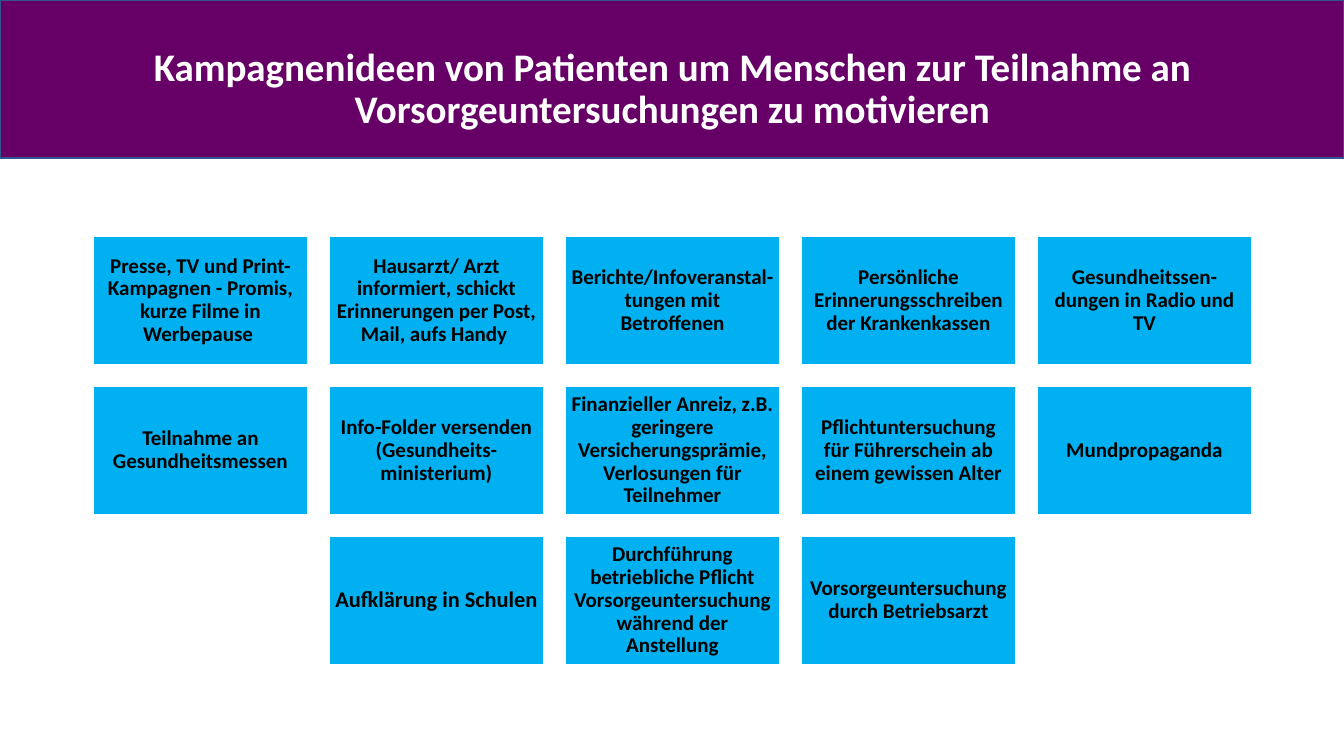
from pptx import Presentation
from pptx import util as u
from pptx.dml.color import RGBColor
from pptx.enum import shapes, text

PX = 914400 / 100.8
IDEAS = [
    ["Presse, TV und Print-Kampagnen - Promis, kurze Filme in Werbepause ",
     "Hausarzt/ Arzt informiert, schickt Erinnerungen per Post, Mail, aufs Handy ",
     "Berichte/Infoveranstal-tungen mit Betroffenen",
     "Persönliche Erinnerungsschreiben der Krankenkassen",
     "Gesundheitssen-dungen in Radio und TV"],
    ["Teilnahme an Gesundheitsmessen",
     "Info-Folder versenden (Gesundheits-ministerium)",
     "Finanzieller Anreiz, z.B. geringere Versicherungsprämie, Verlosungen für Teilnehmer",
     "Pflichtuntersuchung für Führerschein ab einem gewissen Alter",
     "Mundpropaganda"],
    ["Aufklärung in Schulen",
     "Durchführung betriebliche Pflicht Vorsorgeuntersuchung während der Anstellung",
     "Vorsorgeuntersuchung durch Betriebsarzt"],
]
LARGER = {"Aufklärung in Schulen": 16}
COLUMNS = 5


def px(length):
    return u.Emu(round(length * PX))


def color(value):
    return RGBColor.from_string(value)


class CampaignSlide:
    font = "Calibri"
    purple = "660066"
    blue = "00B0F0"
    white = "FFFFFF"
    black = "000000"
    band_edge = "325491"

    def __init__(self, deck):
        self.slide = deck.slides.add_slide(deck.slide_layouts[6])

    def box(self, left, top, width, height, fill, edge):
        area = self.slide.shapes.add_shape(
            shapes.MSO_SHAPE.RECTANGLE, px(left), px(top), px(width), px(height))
        area.shadow.inherit = False
        area.fill.solid()
        area.fill.fore_color.rgb = color(fill)
        area.line.color.rgb = color(edge)
        area.line.width = u.Pt(1)
        return area

    def label(self, frame, wording, size, ink, anchor, insets):
        frame.word_wrap = True
        frame.vertical_anchor = anchor
        side, above = insets
        frame.margin_left = frame.margin_right = px(side)
        frame.margin_top = px(above)
        frame.margin_bottom = px(min(side, above))
        paragraph = frame.paragraphs[0]
        paragraph.alignment = text.PP_ALIGN.CENTER
        paragraph.line_spacing = 0.9
        run = paragraph.add_run()
        run.text = wording
        run.font.name = self.font
        run.font.size = u.Pt(size)
        run.font.bold = True
        run.font.color.rgb = color(ink)

    def heading(self, wording):
        self.box(0, 0, 1344, 158, self.purple, self.band_edge)
        title = self.slide.shapes.add_textbox(px(93), px(19), px(1159), px(115))
        self.label(title.text_frame, wording, 27.9, self.white,
                   text.MSO_ANCHOR.TOP, (10, 29))

    def idea(self, left, top, wording):
        card = self.box(left, top, 215, 129, self.blue, self.white)
        self.label(card.text_frame, wording, LARGER.get(wording, 15), self.black,
                   text.MSO_ANCHOR.MIDDLE, (6, 6))


def main():
    deck = Presentation()
    deck.slide_width, deck.slide_height = px(1344), px(756)
    campaign = CampaignSlide(deck)
    campaign.heading("Kampagnenideen von Patienten um Menschen zur Teilnahme an "
                     "Vorsorgeuntersuchungen zu motivieren")
    for row, ideas in enumerate(IDEAS):
        first_column = (COLUMNS - len(ideas)) // 2
        for column, wording in enumerate(ideas, first_column):
            campaign.idea(93 + 236 * column, 236 + 150 * row, wording)
    deck.save("out.pptx")


if __name__ == "__main__":
    main()
